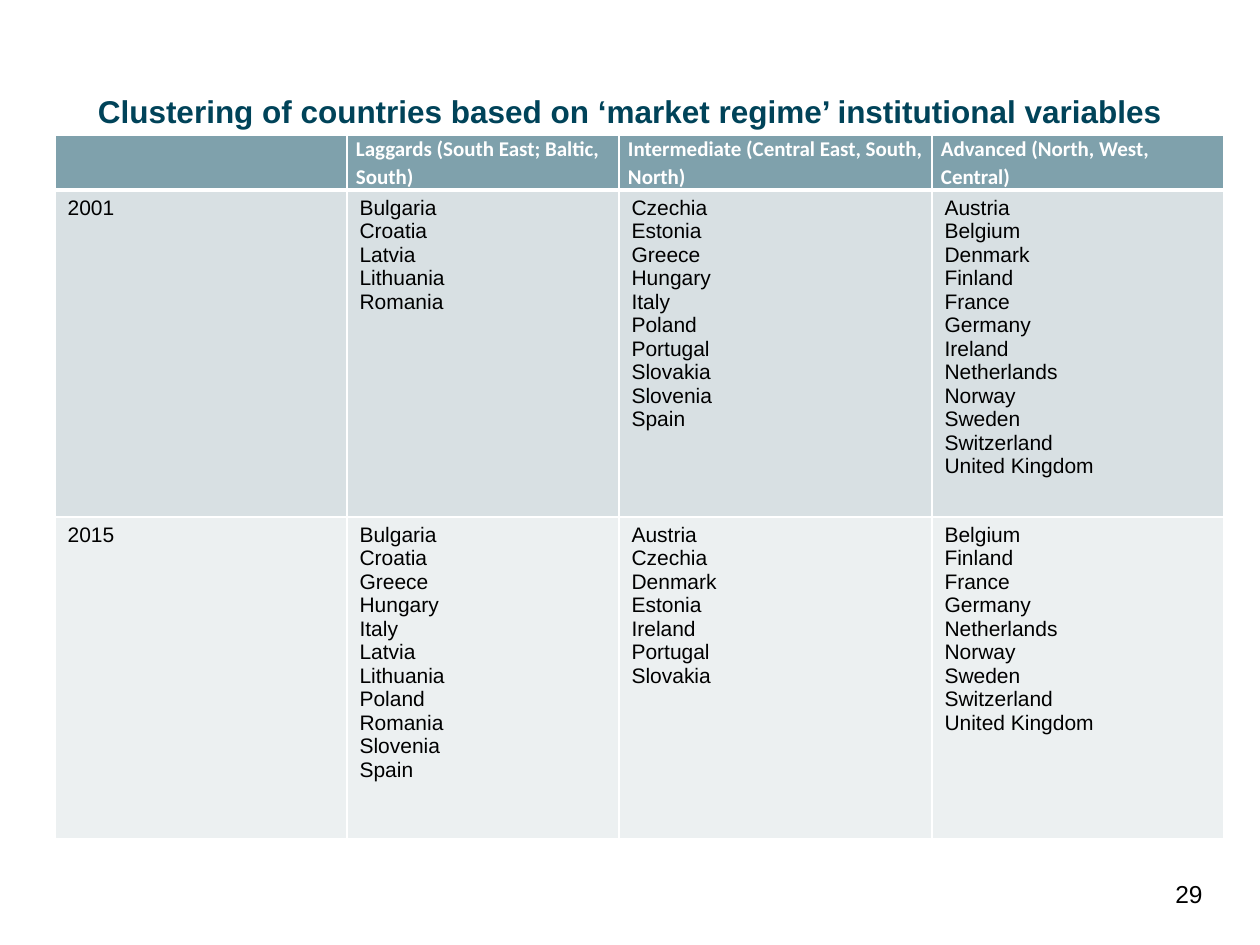
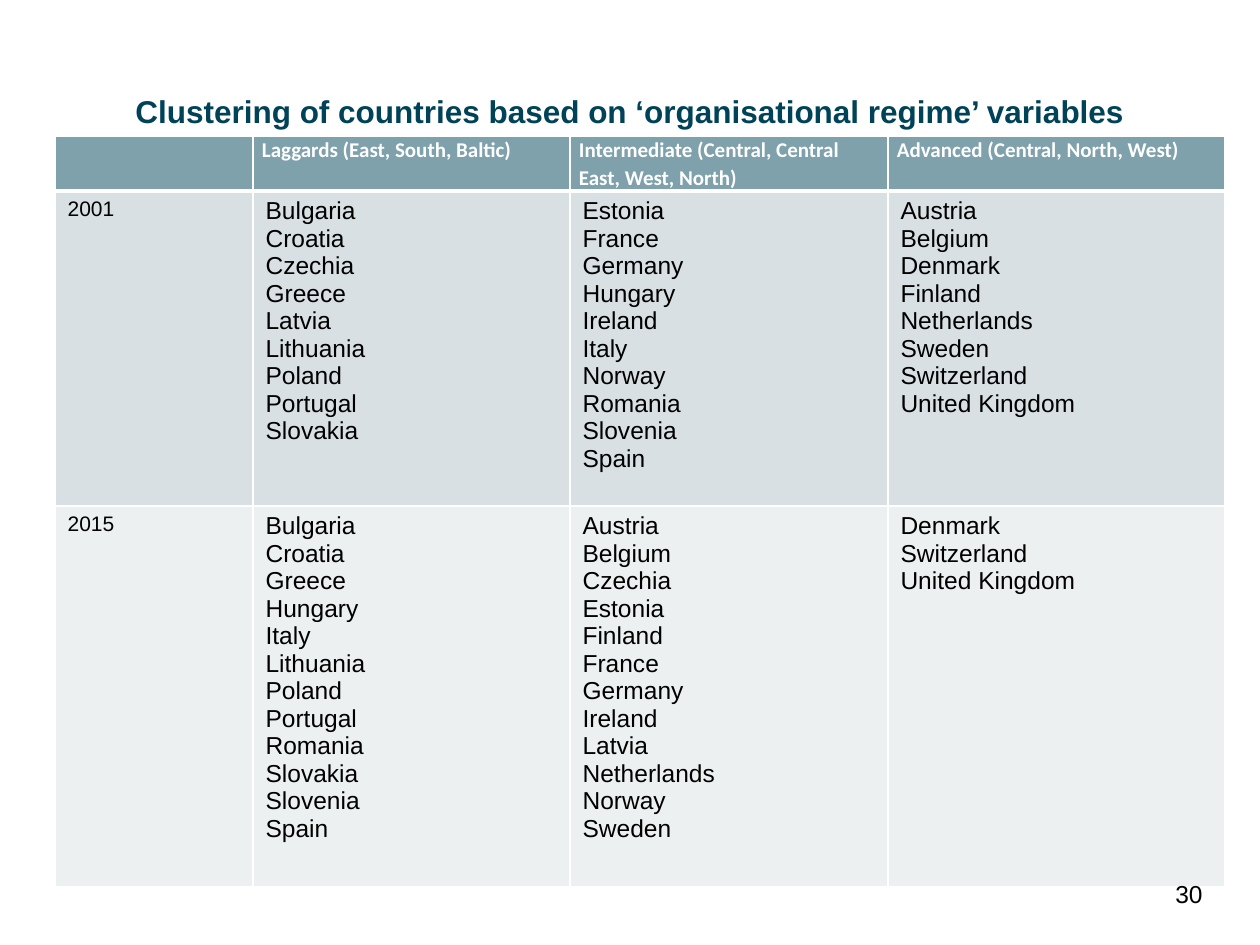
from dataclasses import dataclass

import lxml.etree
import pptx
import pptx.dml.color
import pptx.enum.text
import pptx.oxml.ns
import pptx.slide
import pptx.table
import pptx.text.text
import pptx.util

PX_PER_INCH = 126
TITLE_ONLY_LAYOUT = 5


@dataclass(frozen=True)
class Theme:
    title_color: str = "004359"
    header_fill: str = "7FA1AC"
    period_fills: tuple[str, ...] = ("D8E0E3", "ECF0F1")
    white: str = "FFFFFF"
    black: str = "000000"
    body_font: str = "Arial"
    header_font: str = "Calibri"
    title_size: int = 18
    label_size: int = 12
    number_size: int = 14
    header_spacing: float = 1.07
    grid_width: int = 1
    header_rule_width: int = 3


THEME = Theme()


@dataclass(frozen=True)
class Box:
    left: int
    top: int
    width: int
    height: int


TITLE_BOX = Box(45, 86, 1170, 49)
NUMBER_BOX = Box(1076, 873, 139, 66)
TABLE_LEFT = 55
HEADER_HEIGHT = 55
HEADER_MARGIN = 9


@dataclass(frozen=True)
class Period:
    year: str
    height: int
    clusters: tuple[str, str, str]


@dataclass(frozen=True)
class ClusterSlide:
    title: str
    number: str
    table_top: int
    column_widths: tuple[int, ...]
    cluster_names: tuple[str, str, str]
    country_size: int
    periods: tuple[Period, ...]


CLUSTER_SLIDES = (
    ClusterSlide(
        title="Clustering of countries based on ‘market regime’ institutional variables",
        number="29",
        table_top=135,
        column_widths=(292, 272, 313, 292),
        cluster_names=(
            "Laggards (South East; Baltic, South)",
            "Intermediate (Central East, South, North)",
            "Advanced (North, West, Central)",
        ),
        country_size=12,
        periods=(
            Period("2001", 327, (
                "Bulgaria, Croatia, Latvia, Lithuania, Romania",
                "Czechia, Estonia, Greece, Hungary, Italy, Poland, Portugal, "
                "Slovakia, Slovenia, Spain",
                "Austria, Belgium, Denmark, Finland, France, Germany, Ireland, "
                "Netherlands, Norway, Sweden, Switzerland, United Kingdom",
            )),
            Period("2015", 322, (
                "Bulgaria, Croatia, Greece, Hungary, Italy, Latvia, Lithuania, "
                "Poland, Romania, Slovenia, Spain",
                "Austria, Czechia, Denmark, Estonia, Ireland, Portugal, Slovakia",
                "Belgium, Finland, France, Germany, Netherlands, Norway, Sweden, "
                "Switzerland, United Kingdom",
            )),
        ),
    ),
    ClusterSlide(
        title="Clustering of countries based on ‘organisational regime’ variables",
        number="30",
        table_top=136,
        column_widths=(198, 317, 318, 337),
        cluster_names=(
            "Laggards (East, South, Baltic)",
            "Intermediate (Central, Central East, West, North)",
            "Advanced (Central, North, West)",
        ),
        country_size=14,
        periods=(
            Period("2001", 315, (
                "Bulgaria, Croatia, Czechia, Greece, Latvia, Lithuania, Poland, "
                "Portugal, Slovakia",
                "Estonia, France, Germany, Hungary, Ireland, Italy, Norway, "
                "Romania, Slovenia, Spain",
                "Austria, Belgium, Denmark, Finland, Netherlands, Sweden, "
                "Switzerland, United Kingdom",
            )),
            Period("2015", 381, (
                "Bulgaria, Croatia, Greece, Hungary, Italy, Lithuania, Poland, "
                "Portugal, Romania, Slovakia, Slovenia, Spain",
                "Austria, Belgium, Czechia, Estonia, Finland, France, Germany, "
                "Ireland, Latvia, Netherlands, Norway, Sweden",
                "Denmark, Switzerland, United Kingdom",
            )),
        ),
    ),
)


def px(length: int) -> pptx.util.Emu:
    return pptx.util.Emu(round(length * 914400 / PX_PER_INCH))


def rgb(color: str) -> pptx.dml.color.RGBColor:
    return pptx.dml.color.RGBColor.from_string(color)


def format_runs(frame: pptx.text.text.TextFrame, font: str, size: int,
                color: str, bold: bool = False) -> None:
    for paragraph in frame.paragraphs:
        for run in paragraph.runs:
            run.font.name = font
            run.font.size = pptx.util.Pt(size)
            run.font.bold = bold
            run.font.color.rgb = rgb(color)


def style_cell(cell: pptx.table._Cell, fill: str, top: int, bottom: int) -> None:
    """Give the cell its fill and white borders; top and bottom are in points."""
    ns = pptx.oxml.ns.qn
    properties = cell._tc.get_or_add_tcPr()
    widths = {"a:lnL": THEME.grid_width, "a:lnR": THEME.grid_width,
              "a:lnT": top, "a:lnB": bottom}
    for side, width in widths.items():
        line = lxml.etree.SubElement(properties, ns(side), w=str(pptx.util.Pt(width)))
        line_fill = lxml.etree.SubElement(line, ns("a:solidFill"))
        lxml.etree.SubElement(line_fill, ns("a:srgbClr"), val=THEME.white)
    cell.fill.solid()
    cell.fill.fore_color.rgb = rgb(fill)


def add_title(slide: pptx.slide.Slide, text: str) -> None:
    title = slide.shapes.title
    title.left, title.top = px(TITLE_BOX.left), px(TITLE_BOX.top)
    title.width, title.height = px(TITLE_BOX.width), px(TITLE_BOX.height)
    frame = title.text_frame
    frame.text = text
    frame.auto_size = pptx.enum.text.MSO_AUTO_SIZE.NONE
    frame.vertical_anchor = pptx.enum.text.MSO_ANCHOR.MIDDLE
    frame.paragraphs[0].alignment = pptx.enum.text.PP_ALIGN.CENTER
    format_runs(frame, THEME.body_font, THEME.title_size, THEME.title_color, True)


def fill_header(table: pptx.table.Table, cluster_names: tuple[str, ...]) -> None:
    for column, name in enumerate(("", *cluster_names)):
        cell = table.cell(0, column)
        style_cell(cell, THEME.header_fill, THEME.grid_width, THEME.header_rule_width)
        cell.margin_left = cell.margin_right = px(HEADER_MARGIN)
        cell.margin_top = cell.margin_bottom = 0
        if name:
            cell.text_frame.text = name
            cell.text_frame.paragraphs[0].line_spacing = THEME.header_spacing
            format_runs(cell.text_frame, THEME.header_font, THEME.label_size,
                        THEME.white, True)


def fill_period(table: pptx.table.Table, row: int, period: Period,
                country_size: int) -> None:
    top = THEME.header_rule_width if row == 1 else THEME.grid_width
    for column, names in enumerate((period.year, *period.clusters)):
        cell = table.cell(row, column)
        style_cell(cell, THEME.period_fills[row - 1], top, THEME.grid_width)
        cell.text_frame.text = names.replace(", ", "\n")
        size = country_size if column else THEME.label_size
        format_runs(cell.text_frame, THEME.body_font, size, THEME.black)


def add_cluster_table(slide: pptx.slide.Slide, content: ClusterSlide) -> None:
    heights = (HEADER_HEIGHT, *(period.height for period in content.periods))
    widths = content.column_widths
    table = slide.shapes.add_table(
        len(heights), len(widths), px(TABLE_LEFT), px(content.table_top),
        px(sum(widths)), px(sum(heights))).table
    for column, width in zip(table.columns, widths):
        column.width = px(width)
    for row, height in zip(table.rows, heights):
        row.height = px(height)
    fill_header(table, content.cluster_names)
    for row, period in enumerate(content.periods, start=1):
        fill_period(table, row, period, content.country_size)


def add_slide_number(slide: pptx.slide.Slide, number: str) -> None:
    frame = slide.shapes.add_textbox(
        px(NUMBER_BOX.left), px(NUMBER_BOX.top),
        px(NUMBER_BOX.width), px(NUMBER_BOX.height)).text_frame
    frame.word_wrap = True
    frame.text = number
    frame.paragraphs[0].alignment = pptx.enum.text.PP_ALIGN.RIGHT
    format_runs(frame, THEME.body_font, THEME.number_size, THEME.black)


def main() -> None:
    presentation = pptx.Presentation()
    presentation.slide_width = px(1260)
    presentation.slide_height = px(945)
    for content in CLUSTER_SLIDES:
        slide = presentation.slides.add_slide(
            presentation.slide_layouts[TITLE_ONLY_LAYOUT])
        add_title(slide, content.title)
        add_cluster_table(slide, content)
        add_slide_number(slide, content.number)
    presentation.save("out.pptx")


if __name__ == "__main__":
    main()
